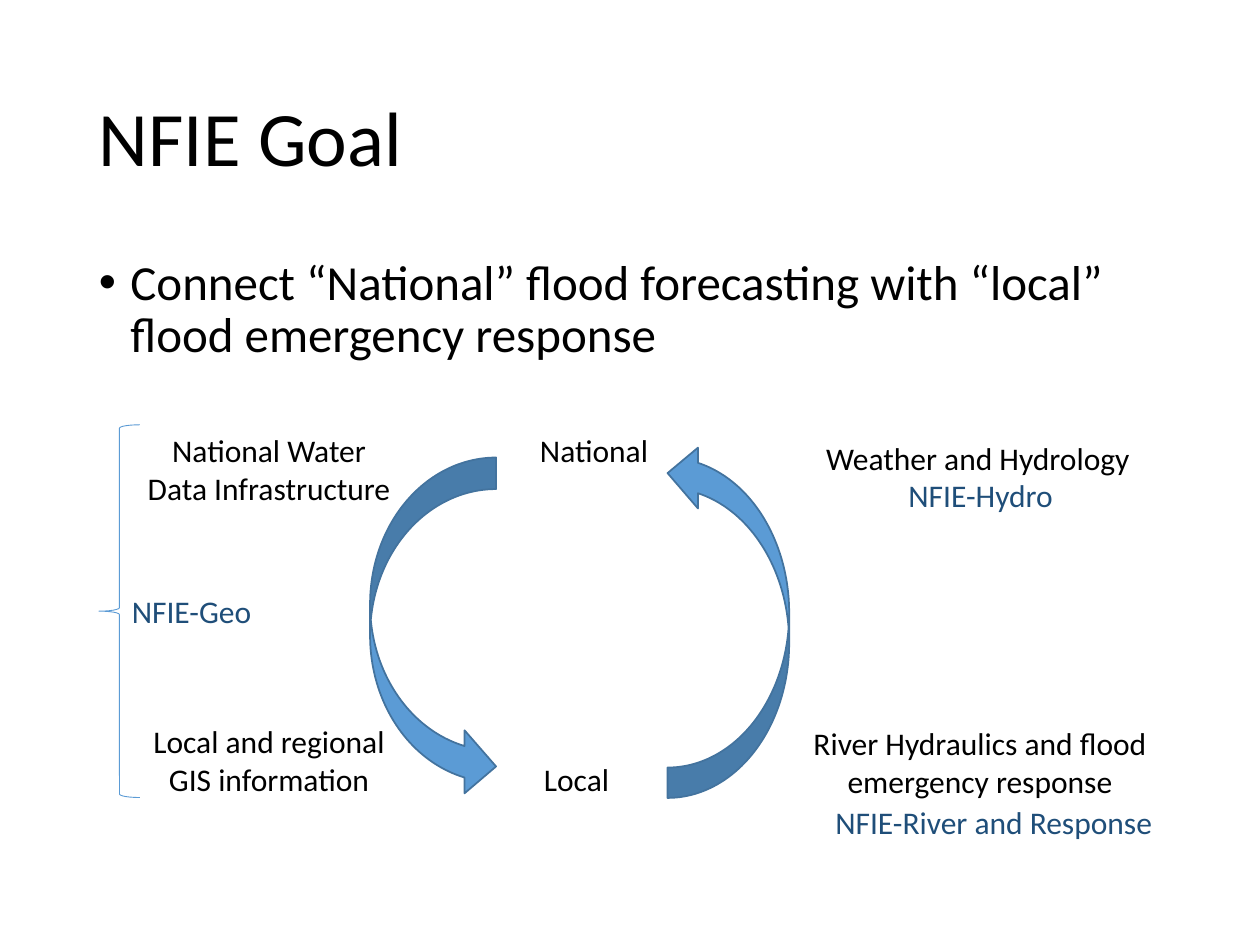
from pptx import Presentation
from pptx.dml.color import RGBColor
from pptx.enum.shapes import MSO_SHAPE
from pptx.enum.text import MSO_ANCHOR, MSO_AUTO_SIZE, PP_ALIGN
from pptx.oxml.ns import qn
from pptx.util import Pt
from lxml import etree

BLACK = RGBColor(0x00, 0x00, 0x00)
NAVY = RGBColor(0x1F, 0x4E, 0x79)
BLUE = RGBColor(0x5B, 0x9B, 0xD5)
OUTLINE = RGBColor(0x43, 0x73, 0x9E)
LEFT, CENTER = PP_ALIGN.LEFT, PP_ALIGN.CENTER
TOP, MIDDLE = MSO_ANCHOR.TOP, MSO_ANCHOR.MIDDLE
FIT, NO_FIT = MSO_AUTO_SIZE.SHAPE_TO_FIT_TEXT, MSO_AUTO_SIZE.NONE
RIGHT_ARROW = MSO_SHAPE.CURVED_RIGHT_ARROW
LEFT_ARROW = MSO_SHAPE.CURVED_LEFT_ARROW
BRACE = MSO_SHAPE.LEFT_BRACE

prs = Presentation()
prs.slide_width, prs.slide_height = Pt(720), Pt(540)
s = prs.slides.add_slide(prs.slide_layouts[6])


def add_text(text, box, size=18, color=BLACK, wrap=False, align=LEFT, anchor=TOP, fit=FIT):
    tf = s.shapes.add_textbox(*map(Pt, box)).text_frame
    for name, value in {"word_wrap": wrap, "auto_size": fit, "vertical_anchor": anchor}.items():
        setattr(tf, name, value)
    p = tf.paragraphs[0]
    p.alignment = align
    r = p.add_run()
    r.text = text
    for name, value in {"name": "Calibri", "size": Pt(size)}.items():
        setattr(r.font, name, value)
    r.font.color.rgb = color
    return p


def add_outline(kind, box, fill, line, width):
    sp = s.shapes.add_shape(kind, *map(Pt, box))
    sp.shadow.inherit = False
    if fill is None:
        sp.fill.background()
    else:
        sp.fill.solid()
        sp.fill.fore_color.rgb = fill
    sp.line.color.rgb = line
    sp.line.width = Pt(width)
    return sp


title = add_text("NFIE Goal", (49.5, 28.75, 621, 104.4), 44, wrap=True, anchor=MIDDLE, fit=NO_FIT)
title.line_spacing = 0.9

goal = add_text("Connect “National” flood forecasting with “local” flood emergency response",
                (49.5, 143.75, 621, 342.6), 28, wrap=True, fit=NO_FIT)
goal.line_spacing = 0.9
goal.space_before = Pt(10)
pPr = goal._p.get_or_add_pPr()
pPr.set("marL", str(Pt(18)))
pPr.set("indent", str(-Pt(18)))
etree.SubElement(pPr, qn("a:buFont")).set("typeface", "Arial")
etree.SubElement(pPr, qn("a:buChar")).set("char", "•")

add_outline(RIGHT_ARROW, (211.5, 261.5, 72, 194.5), BLUE, OUTLINE, 1)
up = add_outline(LEFT_ARROW, (381.5, 253, 69.5, 203), BLUE, OUTLINE, 1)
up._element.spPr.find(qn("a:xfrm")).set("flipV", "1")
add_outline(BRACE, (56.5, 242.75, 23.5, 213), None, BLUE, 0.5)

for text, box, color in [
    ("National", (301.5, 242.75, 77, 29), BLACK),
    ("Local", (303.75, 431, 52.5, 29), BLACK),
    ("Weather and Hydrology", (465, 247.25, 190, 29), BLACK),
    ("NFIE-Hydro", (512, 268.5, 98, 29), NAVY),
    ("NFIE-River and Response", (470.25, 455.5, 198, 29), NAVY),
    ("NFIE-Geo", (68.25, 335, 83.5, 29), NAVY),
]:
    add_text(text, box, color=color)

for text, box in [
    ("National Water Data Infrastructure", (72.75, 242.75, 162, 51)),
    ("Local and regional GIS information", (72.75, 409, 162, 51)),
    ("River Hydraulics and flood emergency response", (454, 410, 212, 51)),
]:
    add_text(text, box, wrap=True, align=CENTER)

prs.save("out.pptx")
